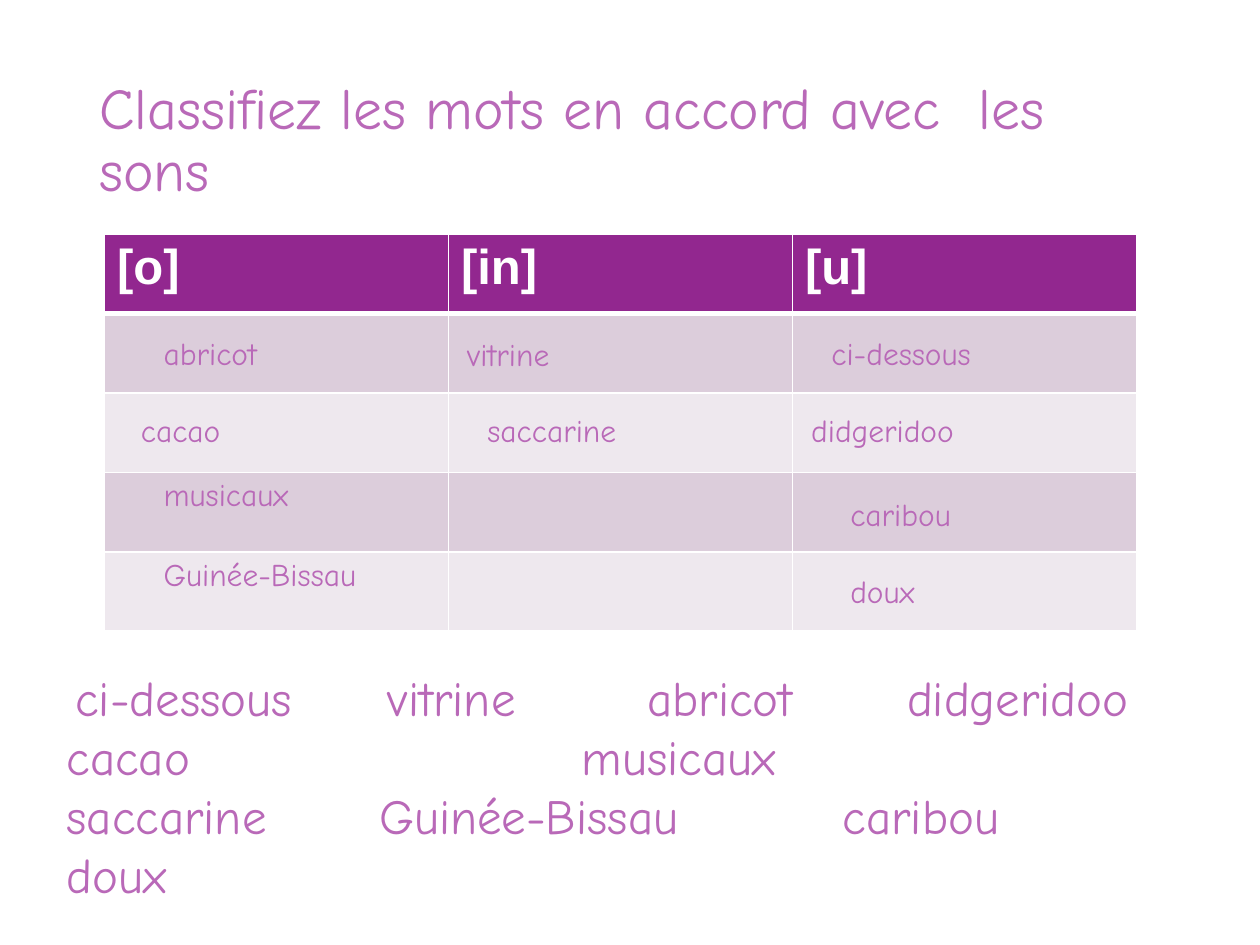
from dataclasses import dataclass

from lxml import etree
from pptx import Presentation
from pptx.dml.color import RGBColor
from pptx.enum.text import MSO_ANCHOR, MSO_AUTO_SIZE
from pptx.oxml.ns import qn
from pptx.util import Inches, Pt

MIDDLE, TOP = MSO_ANCHOR.MIDDLE, MSO_ANCHOR.TOP
GROW, FIXED = MSO_AUTO_SIZE.SHAPE_TO_FIT_TEXT, MSO_AUTO_SIZE.NONE


@dataclass(frozen=True)
class Theme:
    text: str = "B969B8"
    header: str = "92278F"
    bands: tuple = ("DCCDDB", "EEE8EE")
    white: str = "FFFFFF"
    hand_font: str = "Comic Neue"
    header_font: str = "Arial"
    title_size: int = 33
    large_size: int = 28
    word_size: int = 18


@dataclass(frozen=True)
class Grid:
    left: float = 0.83
    top: float = 1.86
    column: float = 2.73
    row: float = 0.63


@dataclass(frozen=True)
class SortedWord:
    text: str
    column: int
    row: int
    indent: float  # offset from the cell's corner
    drop: float
    width: float


@dataclass(frozen=True)
class BankLine:
    words: tuple
    stops: tuple  # tab stops in inches; a first stop of 0 needs no tab


THEME = Theme()
GRID = Grid()
HEADERS = ("[o]", "[in]", "[u]")
ROW_COUNT = 5

SORTED_WORDS = (
    SortedWord("ci-dessous", 2, 1, 0.21, 0.11, 1.47),
    SortedWord("vitrine", 1, 1, 0.05, 0.12, 1.0),
    SortedWord("abricot", 0, 1, 0.37, 0.11, 1.1),
    SortedWord("didgeridoo", 2, 2, 0.05, 0.09, 1.53),
    SortedWord("cacao", 0, 2, 0.19, 0.09, 0.94),
    SortedWord("saccarine", 1, 2, 0.21, 0.09, 1.38),
    SortedWord("musicaux", 0, 3, 0.37, -0.03, 1.36),
    SortedWord("Guinée-Bissau", 0, 4, 0.37, -0.02, 1.93),
    SortedWord("caribou", 2, 3, 0.36, 0.13, 1.15),
    SortedWord("doux", 2, 4, 0.36, 0.11, 0.83),
)

BANK_LINES = (
    BankLine(("ci-dessous", "vitrine", "abricot", "didgeridoo"), (0.07, 2.55, 4.61, 6.67)),
    BankLine(("cacao", "musicaux"), (0, 4.09)),
    BankLine(("saccarine", "Guinée-Bissau", "caribou"), (0, 2.48, 6.16)),
    BankLine(("doux",), (0,)),
)


def write(paragraph, text: str, size: int, color: str = THEME.text,
          font: str = THEME.hand_font, bold: bool = False) -> None:
    run = paragraph.add_run()
    run.text = text
    for name, value in {"size": Pt(size), "name": font, "bold": bold}.items():
        setattr(run.font, name, value)
    run.font.color.rgb = RGBColor.from_string(color)


def add_text_frame(slide, left: float, top: float, width: float, height: float, **settings):
    box = slide.shapes.add_textbox(*map(Inches, (left, top, width, height)))
    for name, value in settings.items():
        setattr(box.text_frame, name, value)
    return box.text_frame


def set_tab_stops(paragraph, stops: tuple) -> None:
    properties = paragraph._p.get_or_add_pPr()
    tab_list = etree.SubElement(properties, qn("a:tabLst"))
    for stop in filter(None, stops):
        etree.SubElement(tab_list, qn("a:tab"), pos=str(Inches(stop)), algn="l")


def style_cell(cell, row: int) -> None:
    properties = cell._tc.get_or_add_tcPr()
    widths = {"L": 1, "R": 1, "T": 3 if row == 1 else 1, "B": 3 if row == 0 else 1}
    for side, width in widths.items():
        line = etree.SubElement(properties, qn(f"a:ln{side}"), w=str(Pt(width)))
        fill = etree.SubElement(line, qn("a:solidFill"))
        etree.SubElement(fill, qn("a:srgbClr"), val=THEME.white)
    color = THEME.bands[(row - 1) % 2] if row else THEME.header
    cell.fill.solid()
    cell.fill.fore_color.rgb = RGBColor.from_string(color)


def add_sound_table(slide) -> None:
    columns = len(HEADERS)
    lengths = (GRID.left, GRID.top, columns * GRID.column, ROW_COUNT * GRID.row)
    table = slide.shapes.add_table(ROW_COUNT, columns, *map(Inches, lengths)).table
    for row in range(ROW_COUNT):
        for column in range(columns):
            style_cell(table.cell(row, column), row)
    for column, header in enumerate(HEADERS):
        paragraph = table.cell(0, column).text_frame.paragraphs[0]
        write(paragraph, header, THEME.large_size, THEME.white, THEME.header_font, True)


def add_sorted_word(slide, word: SortedWord) -> None:
    left = GRID.left + word.column * GRID.column + word.indent
    top = GRID.top + word.row * GRID.row + word.drop
    frame = add_text_frame(slide, left, top, word.width, 0.4,
                           word_wrap=False, auto_size=GROW)
    write(frame.paragraphs[0], word.text, THEME.word_size)


def add_word_bank(slide) -> None:
    frame = add_text_frame(slide, 0.43, 5.25, 9.29, 1.99, word_wrap=True, auto_size=GROW)
    for index, line in enumerate(BANK_LINES):
        paragraph = frame.add_paragraph() if index else frame.paragraphs[0]
        set_tab_stops(paragraph, line.stops)
        lead = "\t" if line.stops[0] else ""
        write(paragraph, lead + "\t".join(line.words), THEME.large_size)


def main() -> None:
    presentation = Presentation()
    presentation.slide_width, presentation.slide_height = Inches(10), Inches(7.5)
    slide = presentation.slides.add_slide(presentation.slide_layouts[6])

    # Title
    title = add_text_frame(slide, 0.69, 0.4, 8.62, 1.45, word_wrap=True,
                           auto_size=FIXED, vertical_anchor=MIDDLE)
    title.paragraphs[0].line_spacing = 0.9
    write(title.paragraphs[0], "Classifiez les mots en accord avec  les sons", THEME.title_size)

    # Table of sounds, the word bank and the words already sorted
    add_sound_table(slide)
    add_word_bank(slide)
    for word in SORTED_WORDS:
        add_sorted_word(slide, word)

    presentation.save("out.pptx")


if __name__ == "__main__":
    main()
